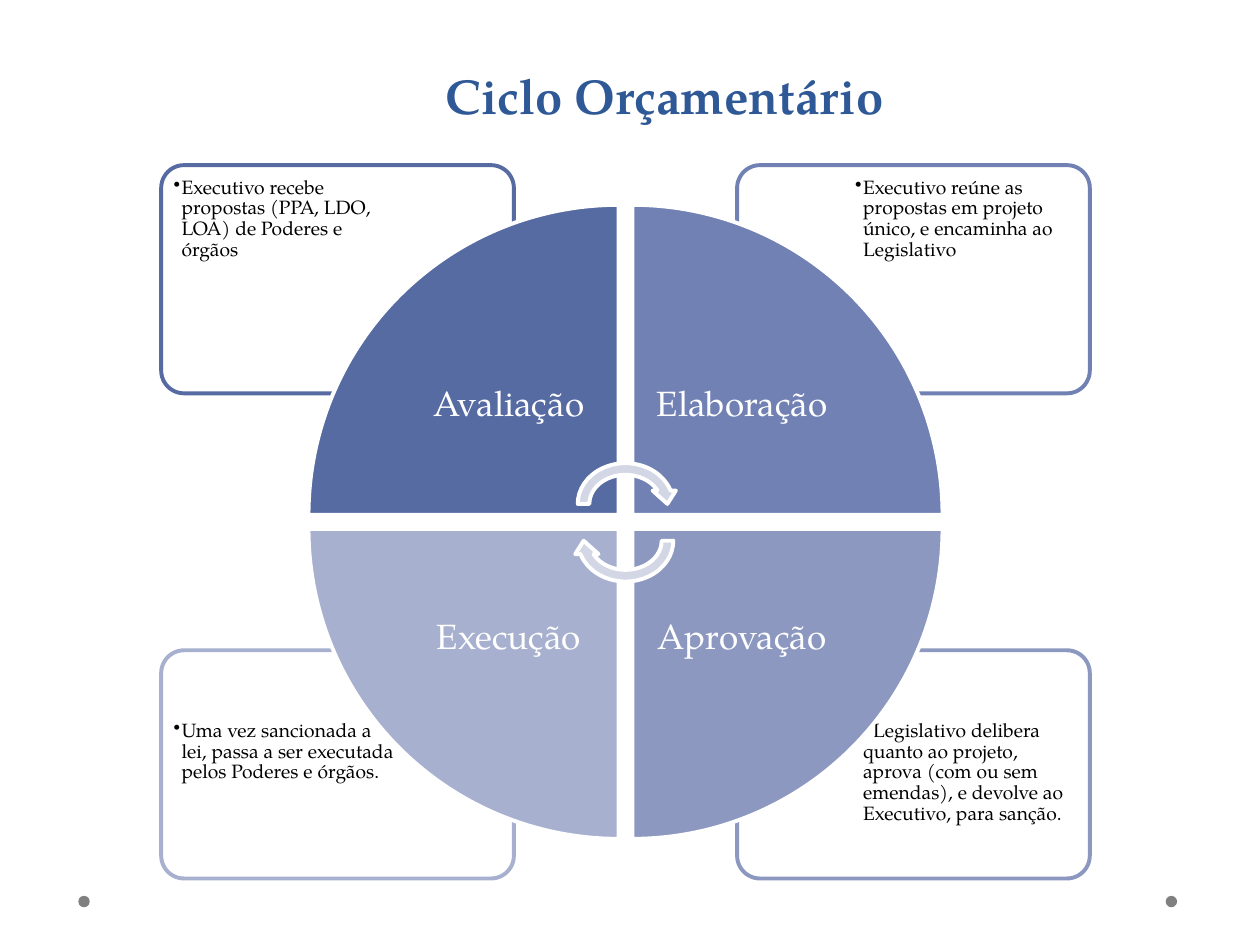
from lxml import etree
from pptx import Presentation
from pptx.dml.color import RGBColor
from pptx.enum.shapes import MSO_SHAPE
from pptx.enum.text import MSO_ANCHOR, PP_ALIGN
from pptx.oxml.ns import qn
from pptx.util import Cm, Pt

OVAL, CARD = MSO_SHAPE.OVAL, MSO_SHAPE.ROUNDED_RECTANGLE
WEDGE, ARROW = MSO_SHAPE.PIE_WEDGE, MSO_SHAPE.CIRCULAR_ARROW
TOP, MIDDLE = MSO_ANCHOR.TOP, MSO_ANCHOR.MIDDLE
LEFT, CENTER = PP_ALIGN.LEFT, PP_ALIGN.CENTER

HUES = {
    "title": "2F5897", "ink": "000000", "white": "FFFFFF",
    "dot": "808080", "arrow": "D2D6E5",
    "check": "576BA3", "draft": "7181B3", "vote": "8C98C0", "run": "A7B0CF",
}
FORMS = {
    "title": {"size": Pt(28), "bold": True},
    "note": {"size": Pt(11), "bold": False},
    "label": {"size": Pt(20), "bold": False},
}
STAGES = [
    ("check", "Avaliação", 0, 0, True,
     "Executivo recebe propostas (PPA, LDO, LOA) de Poderes e órgãos"),
    ("draft", "Elaboração", 1, 0, True,
     "Executivo reúne as propostas em projeto único, e encaminha ao Legislativo"),
    ("vote", "Aprovação", 1, 1, False,
     "Legislativo delibera quanto ao projeto, aprova (com ou sem emendas), "
     "e devolve ao Executivo, para sanção."),
    ("run", "Execução", 0, 1, True,
     "Uma vez sancionada a lei, passa a ser executada pelos Poderes e órgãos."),
]
MID_X, MID_Y = 12.61, 10.52
SIDE, GAP, LABEL = 6.25, 0.28, 4.42


class Deck:
    """Hold the style and the current slide, and draw each kind of element."""

    def __init__(self, face):
        self.face = face
        self.deck = Presentation()
        self.deck.slide_width, self.deck.slide_height = Cm(25.4), Cm(19.05)
        self.slide = self.deck.slides.add_slide(self.deck.slide_layouts[6])

    def shape(self, kind, box, fill, line=None, turn=0):
        item = self.slide.shapes.add_shape(kind, *map(Cm, box))
        item.shadow.inherit = False
        item.rotation = turn
        item.fill.solid()
        item.fill.fore_color.rgb = RGBColor.from_string(HUES[fill])
        if line:
            item.line.color.rgb = RGBColor.from_string(HUES[line])
            item.line.width = Pt(2.25)
        else:
            item.line.fill.background()
        return item

    def card(self, box, line):
        item = self.shape(CARD, box, "white", line)
        item.adjustments[0] = 0.1
        tint = item.fill._xPr.find(".//" + qn("a:srgbClr"))
        etree.SubElement(tint, qn("a:alpha"), val="90000")

    def text(self, box, words, form, hue, align=CENTER, anchor=TOP, pad=None, space=0.9):
        item = self.slide.shapes.add_textbox(*map(Cm, box))
        frame = item.text_frame
        frame.word_wrap = True
        frame.vertical_anchor = anchor
        if pad is not None:
            for edge in ("left", "top", "right", "bottom"):
                setattr(frame, "margin_" + edge, Cm(pad))
        para = frame.paragraphs[0]
        para.text, para.alignment, para.line_spacing = words, align, space
        font = para.runs[0].font
        for name, value in {"name": self.face, **FORMS[form]}.items():
            setattr(font, name, value)
        font.color.rgb = RGBColor.from_string(HUES[hue])
        return para

    def note(self, box, words, dot):
        para = self.text(box, words, "note", "ink", LEFT, pad=0.15)
        props = para._p.get_or_add_pPr()
        props.set("marL", str(Cm(0.16)))
        props.set("indent", str(Cm(-0.16 if dot else 0.2)))
        if dot:
            etree.SubElement(props, qn("a:buChar"), char="•")


def inner(mid, size, gap, far):
    return mid + gap / 2 if far else mid - gap / 2 - size


def main():
    deck = Deck("TeX Gyre Pagella")
    for left in (23.5, 1.58):
        deck.shape(OVAL, (left, 18.06, 0.23, 0.23), "dot")
    deck.text((4.7, 0.33, 17.4, 2.36), "Ciclo Orçamentário", "title", "title", space=Pt(58))
    for hue, _, col, row, dot, words in STAGES:
        deck.card((inner(MID_X, 7.11, 4.5, col), inner(MID_Y, 4.6, 5.18, row), 7.11, 4.6), hue)
        deck.note(((3.35, 17.09)[col], (3.43, 14.38)[row], 4.78, 3.25), words, dot)
    for turn, (hue, name, col, row, *_) in enumerate(STAGES):
        deck.shape(WEDGE, (inner(MID_X, SIDE, GAP, col), inner(MID_Y, SIDE, GAP, row), SIDE, SIDE),
                   hue, "white", 90 * turn)
        deck.text((inner(MID_X, LABEL, GAP, col), inner(MID_Y, LABEL, GAP, row), LABEL, LABEL),
                  name, "label", "white", anchor=MIDDLE, pad=0.4)
    for top, turn in ((9.22, 0), (9.96, 180)):
        deck.shape(ARROW, (11.53, top, 2.16, 1.88), "arrow", "white", turn)
    deck.deck.save("out.pptx")


if __name__ == "__main__":
    main()
